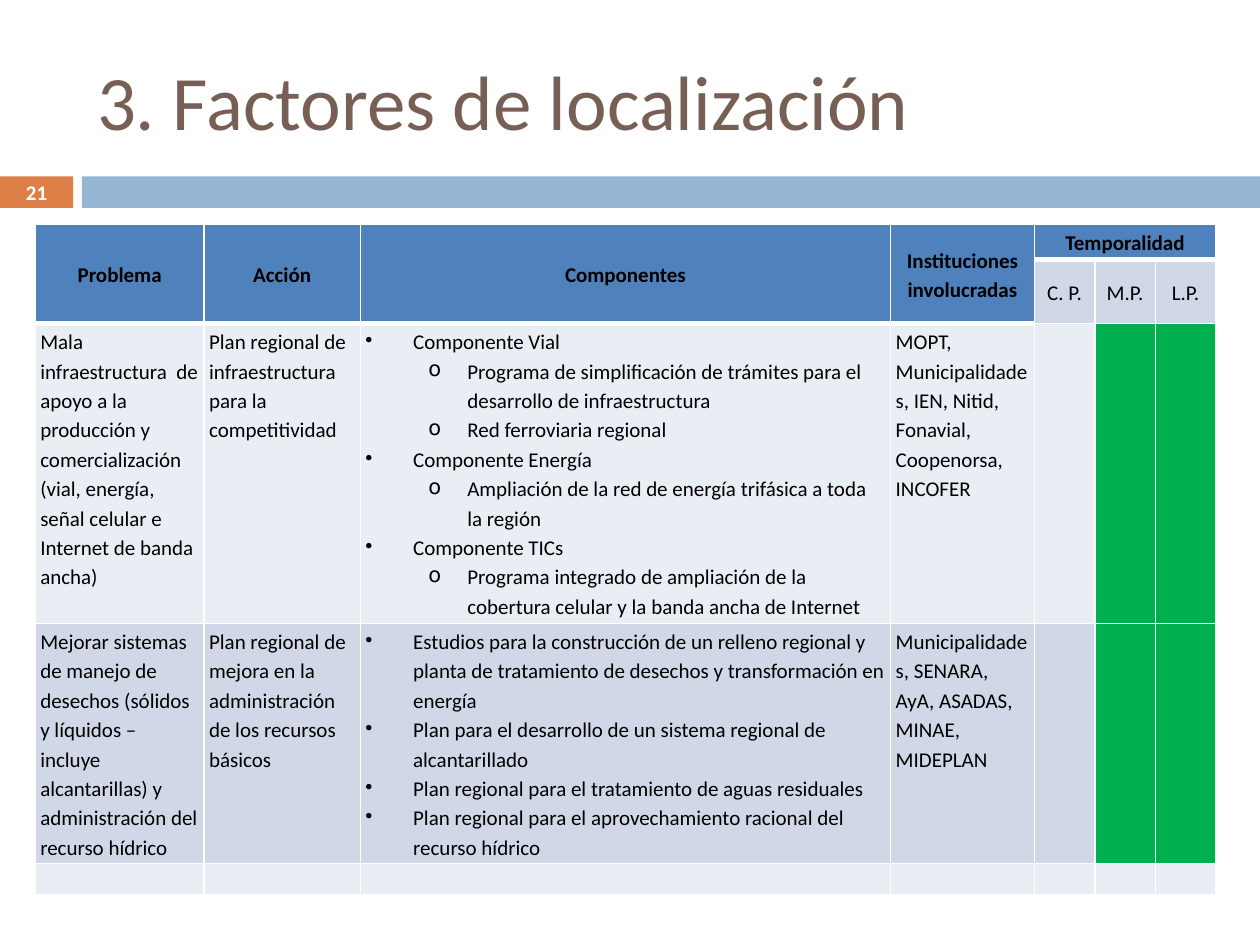
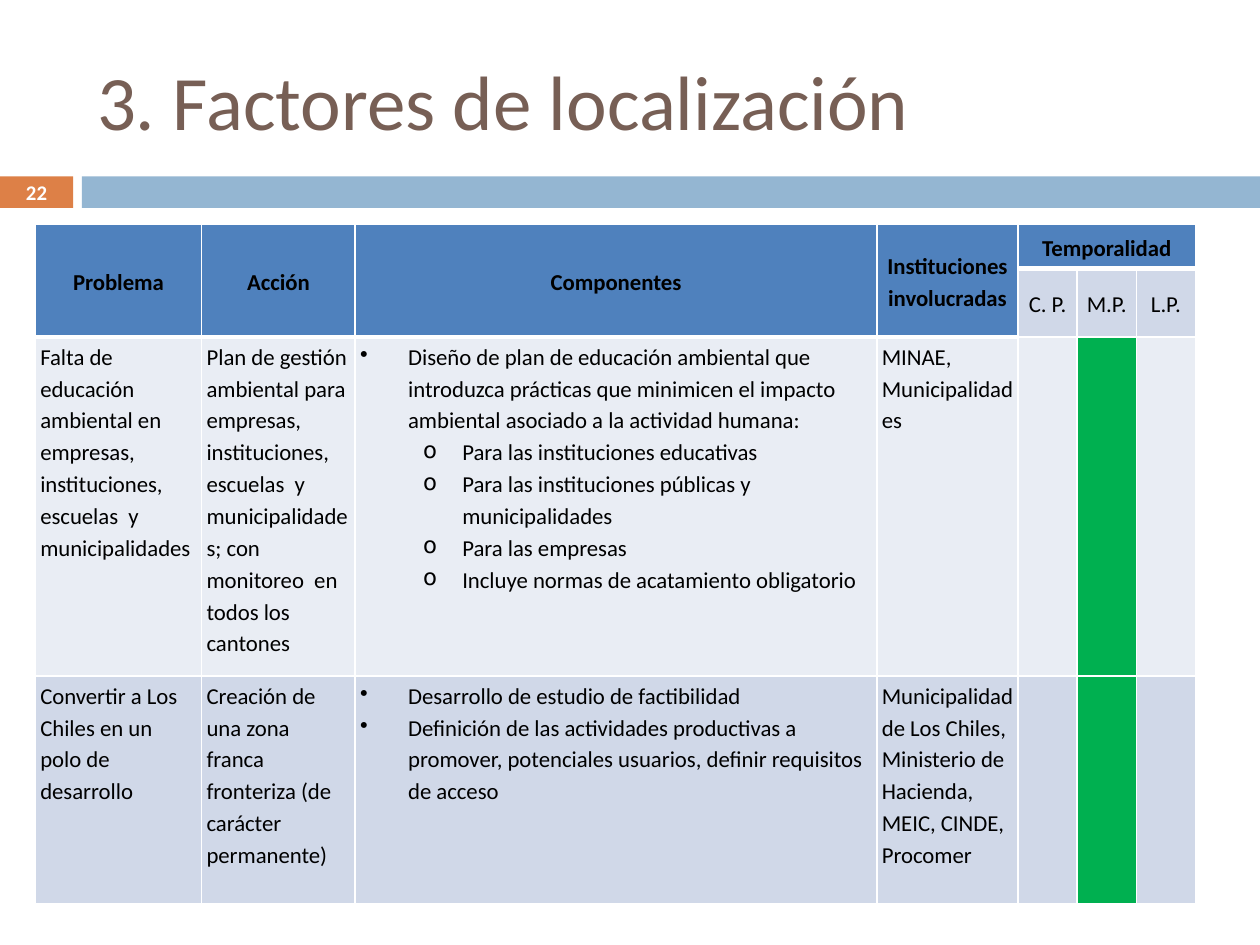
from dataclasses import dataclass

from lxml.etree import SubElement
from pptx import Presentation
from pptx.dml.color import RGBColor
from pptx.enum.shapes import MSO_SHAPE
from pptx.enum.text import MSO_ANCHOR as Anchor, MSO_AUTO_SIZE as AutoSize, PP_ALIGN as Align
from pptx.oxml.ns import qn
from pptx.util import Inches, Pt

WHITE = RGBColor(0xFF, 0xFF, 0xFF)
BLACK = RGBColor(0x00, 0x00, 0x00)
TITLE_BROWN = RGBColor(0x77, 0x5F, 0x55)
ORANGE = RGBColor(0xDD, 0x80, 0x47)
BAND_BLUE = RGBColor(0x94, 0xB6, 0xD2)
HEADER_BLUE = RGBColor(0x4F, 0x81, 0xBD)
ROW_LIGHT = RGBColor(0xE9, 0xED, 0xF4)
ROW_DARK = RGBColor(0xD0, 0xD8, 0xE8)
GREEN = RGBColor(0x00, 0xB0, 0x50)

FONT = "Calibri"
TITLE = "3. Factores de localización"
HEADERS = ("Problema", "Acción", "Componentes", "Instituciones involucradas")
TERMS = ("C. P.", "M.P.", "L.P.")
FIRST_TERM = len(HEADERS)
COLUMN_COUNT = FIRST_TERM + len(TERMS)
HEADER_ROWS = 2
THIN, THICK = Pt(1), Pt(3)


@dataclass(frozen=True)
class Item:
    text: str
    level: int = 0


@dataclass(frozen=True)
class BulletStyle:
    mark: str
    left: float
    hanging: float


@dataclass(frozen=True)
class Plan:
    problem: str = ""
    action: str = ""
    components: tuple[Item, ...] = ()
    institutions: str = ""
    active_terms: tuple[str, ...] = ()


@dataclass(frozen=True)
class PlanSlide:
    number: int
    font_size: int
    column_widths: tuple[float, ...]
    row_heights: tuple[float, ...]
    plans: tuple[Plan, ...]


BULLETS = (BulletStyle("•", 0.38, 0.38), BulletStyle("o", 0.81, 0.31))

PLAN_SLIDES = (
    PlanSlide(
        number=21,
        font_size=12,
        column_widths=(1.34, 1.24, 4.21, 1.14, 0.48, 0.48, 0.48),
        row_heights=(0.28, 0.5, 2.38, 1.9, 0.25),
        plans=(
            Plan(
                "Mala infraestructura  de apoyo a la producción y comercialización "
                "(vial, energía,  señal celular e Internet de banda ancha)",
                "Plan regional de infraestructura para la competitividad",
                (
                    Item("Componente Vial"),
                    Item("Programa de simplificación de trámites para el desarrollo "
                         "de infraestructura", 1),
                    Item("Red ferroviaria regional", 1),
                    Item("Componente Energía"),
                    Item("Ampliación de la red de energía trifásica a toda la región", 1),
                    Item("Componente TICs"),
                    Item("Programa integrado de ampliación de la cobertura celular "
                         "y la banda ancha de Internet", 1),
                ),
                "MOPT, Municipalidades, IEN, Nitid,  Fonavial, Coopenorsa, INCOFER",
                ("M.P.", "L.P."),
            ),
            Plan(
                "Mejorar sistemas de manejo de desechos (sólidos y líquidos – incluye "
                "alcantarillas) y administración del recurso hídrico",
                "Plan regional de mejora en la administración de los recursos básicos",
                (
                    Item("Estudios para la construcción de un relleno regional y planta "
                         "de tratamiento de desechos y transformación en energía"),
                    Item("Plan para el desarrollo de un sistema regional de alcantarillado"),
                    Item("Plan regional para el tratamiento de aguas residuales"),
                    Item("Plan regional para el aprovechamiento racional del recurso hídrico"),
                ),
                "Municipalidades, SENARA, AyA, ASADAS, MINAE, MIDEPLAN",
                ("M.P.", "L.P."),
            ),
            Plan(),
        ),
    ),
    PlanSlide(
        number=22,
        font_size=13,
        column_widths=(1.32, 1.22, 4.14, 1.12, 0.47, 0.47, 0.47),
        row_heights=(0.35, 0.54, 2.69, 1.81),
        plans=(
            Plan(
                "Falta de educación ambiental en empresas, instituciones, "
                "escuelas  y municipalidades",
                "Plan de gestión ambiental para empresas, instituciones, escuelas  y "
                "municipalidades; con monitoreo  en todos los cantones",
                (
                    Item("Diseño de plan de educación ambiental que introduzca prácticas que "
                         "minimicen el impacto ambiental asociado a la actividad humana:"),
                    Item("Para las instituciones educativas", 1),
                    Item("Para las instituciones públicas y municipalidades", 1),
                    Item("Para las empresas", 1),
                    Item("Incluye normas de acatamiento obligatorio", 1),
                ),
                "MINAE, Municipalidades",
                ("M.P.",),
            ),
            Plan(
                "Convertir a Los Chiles en un polo de desarrollo",
                "Creación de una zona franca fronteriza (de carácter permanente)",
                (
                    Item("Desarrollo de estudio de factibilidad"),
                    Item("Definición de las actividades productivas a promover, "
                         "potenciales usuarios, definir requisitos de acceso"),
                ),
                "Municipalidad de Los Chiles, Ministerio de Hacienda, MEIC, CINDE, Procomer",
                ("M.P.",),
            ),
        ),
    ),
)


def set_font(paragraph, size: float, color: RGBColor, bold: bool = False) -> None:
    font = paragraph.font
    font.name, font.size, font.bold = FONT, Pt(size), bold
    font.color.rgb = color


def add_title(slide) -> None:
    title = slide.shapes.title
    title.left, title.top = Inches(0.67), Inches(0.25)
    title.width, title.height = Inches(8.92), Inches(1.08)
    frame = title.text_frame
    frame.text = TITLE
    frame.auto_size = AutoSize.NONE
    frame.vertical_anchor = Anchor.MIDDLE
    paragraph = frame.paragraphs[0]
    paragraph.alignment = Align.LEFT
    set_font(paragraph, 44, TITLE_BROWN)


def add_band(slide, left: float, width: float, color: RGBColor) -> None:
    band = slide.shapes.add_shape(
        MSO_SHAPE.RECTANGLE, Inches(left), Inches(1.4), Inches(width), Inches(0.25))
    band.shadow.inherit = False
    band.fill.solid()
    band.fill.fore_color.rgb = color
    band.line.fill.background()


def add_number(slide, number: int) -> None:
    box = slide.shapes.add_textbox(Inches(0), Inches(1.39), Inches(0.58), Inches(0.27))
    frame = box.text_frame
    frame.word_wrap = True
    frame.vertical_anchor = Anchor.MIDDLE
    frame.margin_top = frame.margin_bottom = 0
    frame.text = str(number)
    paragraph = frame.paragraphs[0]
    paragraph.alignment = Align.CENTER
    set_font(paragraph, 11.9, WHITE, bold=True)


def add_borders(cell, top: int, bottom: int) -> None:
    properties = cell._tc.get_or_add_tcPr()
    for side, width in (("L", THIN), ("R", THIN), ("T", top), ("B", bottom)):
        line = SubElement(properties, qn(f"a:ln{side}"), w=str(width))
        fill = SubElement(line, qn("a:solidFill"))
        SubElement(fill, qn("a:srgbClr"), val=str(WHITE))


def format_cell(cell, color: RGBColor, top: int = THIN, bottom: int = THIN) -> None:
    cell.margin_left = cell.margin_right = Inches(0.04)
    cell.margin_top = cell.margin_bottom = Inches(0.02)
    add_borders(cell, top, bottom)
    cell.fill.solid()
    cell.fill.fore_color.rgb = color


def write_cell(cell, text: str, size: int, centered: bool = False, bold: bool = False) -> None:
    cell.text = text
    cell.vertical_anchor = Anchor.MIDDLE if centered else Anchor.TOP
    paragraph = cell.text_frame.paragraphs[0]
    paragraph.alignment = Align.CENTER if centered else Align.LEFT
    paragraph.line_spacing = 1.15 if text else 1.0
    set_font(paragraph, size, BLACK, bold)


def write_bullets(cell, items: tuple[Item, ...], size: int) -> None:
    cell.text = "\n".join(item.text for item in items)
    for paragraph, item in zip(cell.text_frame.paragraphs, items):
        style = BULLETS[item.level]
        properties = paragraph._p.get_or_add_pPr()
        properties.set("marL", str(Inches(style.left)))
        properties.set("indent", str(-Inches(style.hanging)))
        SubElement(properties, qn("a:buChar"), char=style.mark)
        paragraph.level = item.level
        paragraph.line_spacing = 1.15
        set_font(paragraph, size, BLACK)


def fill_header(table, size: int) -> None:
    for column in range(COLUMN_COUNT):
        is_term = column >= FIRST_TERM
        format_cell(table.cell(0, column), HEADER_BLUE, bottom=THICK)
        format_cell(table.cell(1, column), ROW_DARK if is_term else HEADER_BLUE,
                    top=THICK if is_term else THIN, bottom=THIN if is_term else THICK)
    for column, header in enumerate(HEADERS):
        table.cell(0, column).merge(table.cell(1, column))
        write_cell(table.cell(0, column), header, size, centered=True, bold=True)
    table.cell(0, FIRST_TERM).merge(table.cell(0, COLUMN_COUNT - 1))
    write_cell(table.cell(0, FIRST_TERM), "Temporalidad", size, centered=True, bold=True)
    for column, term in enumerate(TERMS, FIRST_TERM):
        write_cell(table.cell(1, column), term, size, centered=True)


def fill_plan(table, index: int, plan: Plan, size: int) -> None:
    row = index + HEADER_ROWS
    row_color = ROW_DARK if index % 2 else ROW_LIGHT
    texts = (plan.problem, plan.action, "", plan.institutions) + ("",) * len(TERMS)
    for column, text in enumerate(texts):
        cell = table.cell(row, column)
        is_term = column >= FIRST_TERM
        active = is_term and TERMS[column - FIRST_TERM] in plan.active_terms
        format_cell(cell, GREEN if active else row_color,
                    top=THICK if index == 0 and not is_term else THIN)
        if column == 2 and plan.components:
            write_bullets(cell, plan.components, size)
        else:
            write_cell(cell, text, size)


def add_plan_table(slide, content: PlanSlide) -> None:
    table = slide.shapes.add_table(
        len(content.row_heights), COLUMN_COUNT, Inches(0.28), Inches(1.78),
        Inches(sum(content.column_widths)), Inches(sum(content.row_heights))).table
    table.first_row = table.horz_banding = False
    for column, width in zip(table.columns, content.column_widths):
        column.width = Inches(width)
    for row, height in zip(table.rows, content.row_heights):
        row.height = Inches(height)
    fill_header(table, content.font_size)
    for index, plan in enumerate(content.plans):
        fill_plan(table, index, plan, content.font_size)


def main() -> None:
    presentation = Presentation()
    presentation.slide_width, presentation.slide_height = Inches(10), Inches(7.5)
    for content in PLAN_SLIDES:
        slide = presentation.slides.add_slide(presentation.slide_layouts[5])
        add_band(slide, 0, 0.58, ORANGE)
        add_band(slide, 0.65, 9.35, BAND_BLUE)
        add_title(slide)
        add_plan_table(slide, content)
        add_number(slide, content.number)
    presentation.save("out.pptx")


if __name__ == "__main__":
    main()
